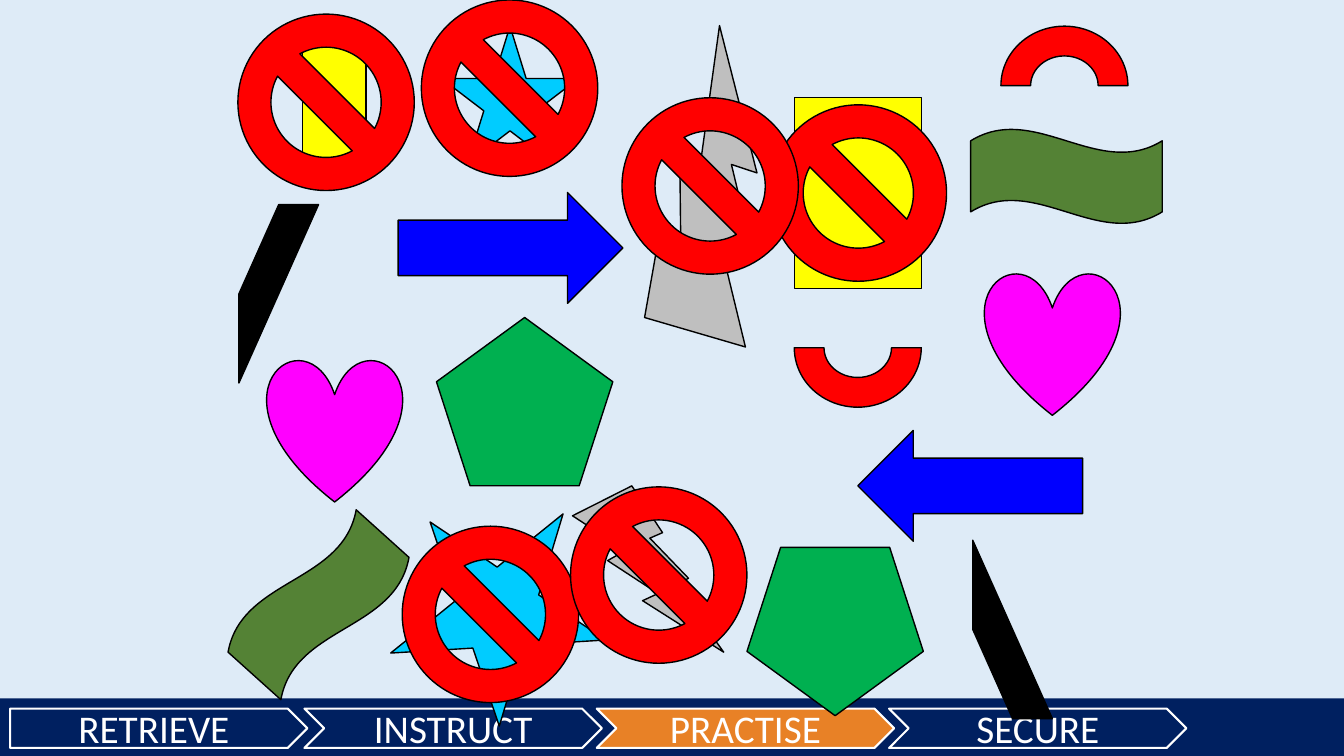
"""Build a slide of paired shapes, some crossed out, above a lesson stage bar."""
from dataclasses import dataclass
from typing import Optional

from pptx import Presentation
from pptx.dml.color import RGBColor
from pptx.enum.shapes import MSO_SHAPE
from pptx.enum.text import MSO_ANCHOR, PP_ALIGN
from pptx.shapes.autoshape import Shape
from pptx.slide import Slide
from pptx.util import Inches, Pt

CELL = Inches(0.1)
COLUMNS, ROWS = 133.33, 75

SKY = RGBColor(0xDE, 0xEB, 0xF7)
NAVY = RGBColor(0x00, 0x20, 0x60)
ORANGE = RGBColor(0xE8, 0x81, 0x26)
WHITE = RGBColor(0xFF, 0xFF, 0xFF)
BLACK = RGBColor(0x00, 0x00, 0x00)
BLUE = RGBColor(0x00, 0x00, 0xFF)
YELLOW = RGBColor(0xFF, 0xFF, 0x00)
MAGENTA = RGBColor(0xFF, 0x00, 0xFF)
GREY = RGBColor(0xBF, 0xBF, 0xBF)
RED = RGBColor(0xFF, 0x00, 0x00)
GREEN = RGBColor(0x00, 0xB0, 0x50)
CYAN = RGBColor(0x00, 0xCC, 0xFF)
OLIVE = RGBColor(0x54, 0x82, 0x35)

BAR_TOP, BAR_HEIGHT = 69.3, 5.7
STAGE_TOP, STAGE_WIDTH, STAGE_HEIGHT = 70.3, 29.5, 3.9
FIRST_STAGE_LEFT, SECOND_STAGE_LEFT, STAGE_STEP = 1, 30.2, 29
STAGES = ("RETRIEVE", "INSTRUCT", "PRACTISE", "SECURE")
CURRENT_STAGE = "PRACTISE"


@dataclass(frozen=True)
class Spot:
    """Grid position of one figure, with its turn in degrees."""
    column: float
    row: float
    turn: float = 0
    flipped: bool = False


@dataclass(frozen=True)
class Figure:
    """One outline and colour, drawn at every spot."""
    kind: MSO_SHAPE
    fill: RGBColor
    width: float
    height: float
    spots: tuple[Spot, ...]


FIGURES = (
    Figure(MSO_SHAPE.RIGHT_ARROW, BLUE, 22.3, 11, (Spot(39.5, 19.1), Spot(85.1, 42.7, 180))),
    Figure(MSO_SHAPE.RECTANGLE, YELLOW, 12.6, 18.9, (Spot(78.8, 9.7),)),
    Figure(MSO_SHAPE.RECTANGLE, YELLOW, 6.3, 13.6, (Spot(30, 3.4),)),
    Figure(MSO_SHAPE.HEART, MAGENTA, 13.4, 14.2, (Spot(26.5, 35.6), Spot(97.7, 27))),
    Figure(MSO_SHAPE.LIGHTNING_BOLT, GREY, 15, 16.5, (Spot(56.8, 48.2),)),
    Figure(MSO_SHAPE.LIGHTNING_BOLT, GREY, 23.7, 26.2, (Spot(59.2, 7.1, 223.2),)),
    Figure(MSO_SHAPE.BLOCK_ARC, RED, 12.6, 11.8, (Spot(99.3, 2.6), Spot(78.8, 28.6, flipped=True))),
    Figure(MSO_SHAPE.DIAGONAL_STRIPE, BLACK, 7.9, 17.7,
           (Spot(23.7, 20.3), Spot(96.5, 53.6, flipped=True))),
    Figure(MSO_SHAPE.REGULAR_PENTAGON, GREEN, 17.5, 16.7, (Spot(43.3, 31.5), Spot(74.1, 54.3, 180))),
    Figure(MSO_SHAPE.STAR_5_POINT, CYAN, 13.6, 13.6, (Spot(43.8, 2.6),)),
    Figure(MSO_SHAPE.STAR_5_POINT, CYAN, 21, 21, (Spot(39.5, 49.2, 33.9),)),
    Figure(MSO_SHAPE.WAVE, OLIVE, 19, 9.4, (Spot(96.3, 12.8), Spot(22.1, 55.3, 312))),
    Figure(MSO_SHAPE.NO_SYMBOL, RED, 17.5, 17.5,
           (Spot(41.8, 0), Spot(39.9, 52.2), Spot(23.6, 1.4),
            Spot(76.4, 10.4), Spot(56.6, 48.3), Spot(61.7, 9.7))),
)


def cells(count: float) -> int:
    """Convert grid cells to a length."""
    return round(count * CELL)


def add_figure(page: Slide, kind: MSO_SHAPE, spot: Spot, width: float, height: float,
               fill: RGBColor, line: Optional[RGBColor] = BLACK, weight: float = 1) -> Shape:
    """Draw one filled shape on the grid."""
    shape = page.shapes.add_shape(
        kind, cells(spot.column), cells(spot.row), cells(width), cells(height))
    shape.shadow.inherit = False
    shape.fill.solid()
    shape.fill.fore_color.rgb = fill
    if line is None:
        shape.line.fill.background()
    else:
        shape.line.color.rgb = line
        shape.line.width = Pt(weight)
    shape.rotation = spot.turn
    if spot.flipped:
        shape.element.spPr.xfrm.set("flipV", "1")
    return shape


def add_stage(page: Slide, index: int, label: str) -> None:
    """Draw one labelled stage of the bar."""
    kind, left = MSO_SHAPE.PENTAGON, FIRST_STAGE_LEFT
    if index:
        kind, left = MSO_SHAPE.CHEVRON, SECOND_STAGE_LEFT + (index - 1) * STAGE_STEP
    fill = ORANGE if label == CURRENT_STAGE else NAVY
    box = add_figure(page, kind, Spot(left, STAGE_TOP), STAGE_WIDTH, STAGE_HEIGHT,
                     fill, WHITE, 1.5)
    frame = box.text_frame
    frame.vertical_anchor = MSO_ANCHOR.MIDDLE
    para = frame.paragraphs[0]
    para.text = label
    para.alignment = PP_ALIGN.CENTER
    para.font.name = "Calibri"
    para.font.size = Pt(28)
    para.font.color.rgb = WHITE


def main() -> None:
    """Build and save the deck."""
    deck = Presentation()
    deck.slide_width, deck.slide_height = cells(COLUMNS), cells(ROWS)
    page = deck.slides.add_slide(deck.slide_layouts[6])
    page.background.fill.solid()
    page.background.fill.fore_color.rgb = SKY
    add_figure(page, MSO_SHAPE.RECTANGLE, Spot(0, BAR_TOP), COLUMNS, BAR_HEIGHT, NAVY, None)
    for index, label in enumerate(STAGES):
        add_stage(page, index, label)
    for figure in FIGURES:
        for spot in figure.spots:
            add_figure(page, figure.kind, spot, figure.width, figure.height, figure.fill)
    deck.save("out.pptx")


if __name__ == "__main__":
    main()
